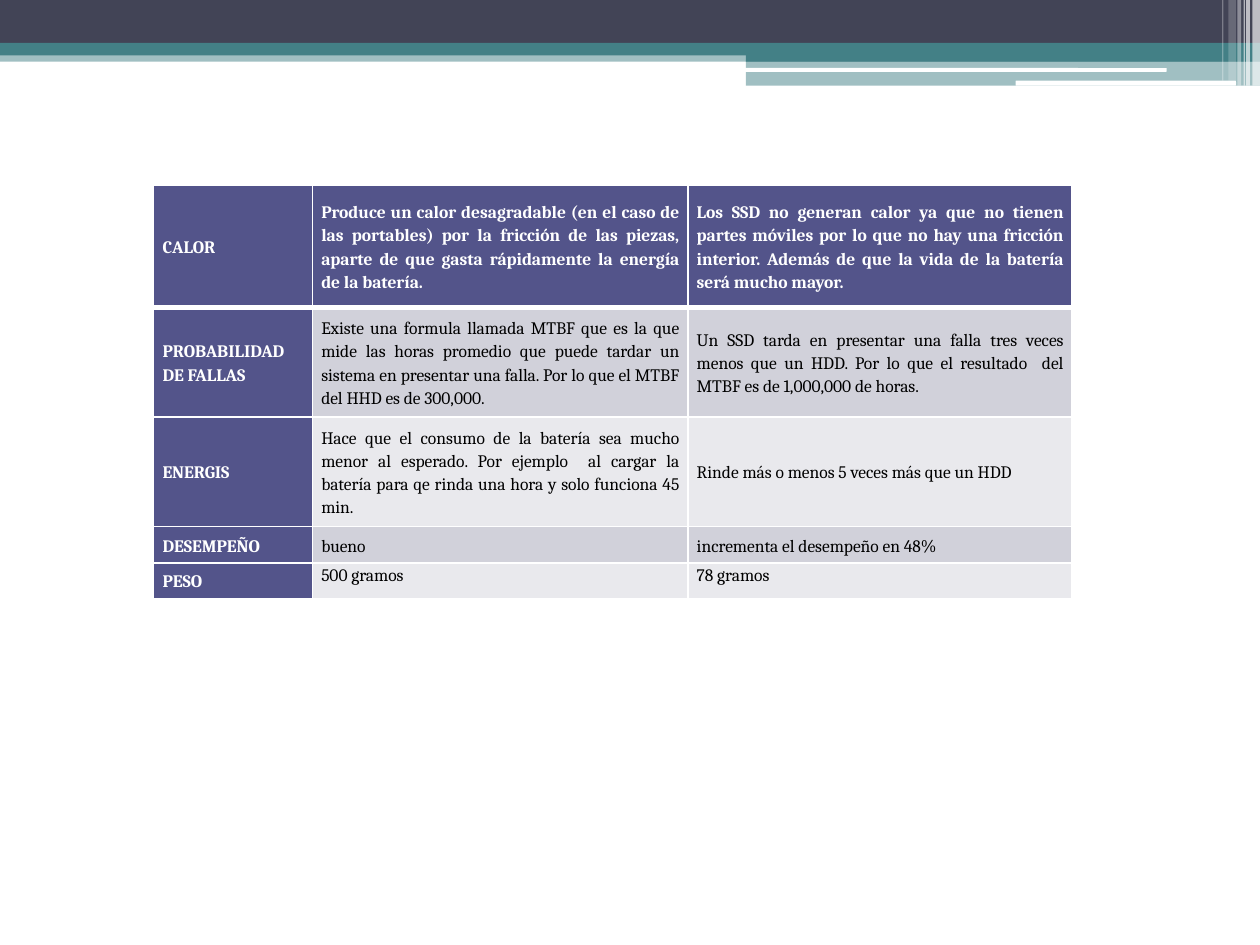
from dataclasses import dataclass

from lxml.etree import SubElement
from pptx import Presentation
from pptx.dml.color import RGBColor
from pptx.enum.shapes import MSO_SHAPE
from pptx.enum.text import MSO_ANCHOR, PP_ALIGN
from pptx.oxml import parse_xml
from pptx.oxml.ns import nsdecls, qn
from pptx.util import Inches, Pt


@dataclass(frozen=True)
class Theme:
    dark: str = "424456"
    teal: str = "438086"
    white: str = "FFFFFF"
    black: str = "000000"
    head: str = "53548A"
    bands: tuple = ("E9E9ED", "D1D1DA")
    font: str = "Cambria"
    size: int = 10
    thin: int = 1
    thick: int = 3


THEME = Theme()

# left, top, width, height, colour, opacity in percent
BARS = [
    (0, 0.4, 10, 0.09, THEME.teal, 50),
    (0, 0, 10, 0.34, THEME.dark, 100),
    (0, 0.34, 10, 0.1, THEME.teal, 100),
    (5.92, 0.39, 4.08, 0.1, THEME.teal, 100),
    (5.92, 0.48, 4.08, 0.2, THEME.teal, 50),
]
# left, top, width, height
LINES = [(5.91, 0.54, 3.35, 0.03), (8.06, 0.64, 1.75, 0.04)]
# left, width, height, opacity in percent
STRIPES = [
    (9.94, 0.06, 0.68, 65),
    (9.89, 0.03, 0.68, 65),
    (9.87, 0.01, 0.68, 60),
    (9.82, 0.03, 0.68, 40),
    (9.75, 0.06, 0.64, 20),
    (9.7, 0.01, 0.64, 30),
]

COLS = [1.26, 2.98, 3.05]
ROWS = [0.97, 0.87, 0.87, 0.29, 0.28]
CELLS = [
    ("CALOR",
     "Produce un calor desagradable (en el caso de las portables) por la "
     "fricción de las piezas, aparte de que gasta rápidamente la energía de "
     "la batería.",
     "Los SSD no generan calor ya que no tienen partes móviles por lo que no "
     "hay una fricción interior. Además de que la vida de la batería será "
     "mucho mayor."),
    ("PROBABILIDAD DE FALLAS",
     "Existe una formula llamada MTBF que es la que mide las horas promedio "
     "que puede tardar un sistema en presentar una falla. Por lo que el MTBF "
     "del HHD es de 300,000.",
     "Un SSD tarda en presentar una falla tres veces menos que un HDD. Por lo "
     "que el resultado  del MTBF es de 1,000,000 de horas."),
    ("ENERGIS",
     "Hace que el consumo de la batería sea mucho menor al esperado. Por "
     "ejemplo  al cargar la batería para qe rinda una hora y solo funciona "
     "45 min.",
     "Rinde más o menos 5 veces más que un HDD"),
    ("DESEMPEÑO", "bueno", "incrementa el desempeño en 48%"),
    ("PESO", "500 gramos", "78 gramos"),
]


def add_bar(slide, box, color, alpha=100, kind=MSO_SHAPE.RECTANGLE):
    bar = slide.shapes.add_shape(kind, *map(Inches, box))
    bar.shadow.inherit = False
    bar.line.fill.background()
    bar.fill.solid()
    bar.fill.fore_color.rgb = RGBColor.from_string(color)
    if alpha < 100:
        tint = bar.fill._xPr.find(qn("a:solidFill"))[0]
        SubElement(tint, qn("a:alpha"), val=str(alpha * 1000))


def add_banner(slide, left, top):
    for x, y, wide, high, color, alpha in BARS:
        add_bar(slide, (left + x, top + y, wide, high), color, alpha)
    for x, y, wide, high in LINES:
        add_bar(slide, (left + x, top + y, wide, high), THEME.white,
                kind=MSO_SHAPE.ROUNDED_RECTANGLE)
    for x, wide, high, alpha in STRIPES:
        add_bar(slide, (left + x, top, wide, high), THEME.white, alpha)


def set_edges(cell, **widths):
    """Draw white borders; keys are the sides L, R, T and B, in points."""
    props = cell._tc.get_or_add_tcPr()
    for spot, side in enumerate("LRTB"):
        props.insert(spot, parse_xml(
            f'<a:ln{side} {nsdecls("a")} w="{Pt(widths[side])}"><a:solidFill>'
            f'<a:srgbClr val="{THEME.white}"/></a:solidFill></a:ln{side}>'))


def fill_cell(cell, text, row, col):
    strong = row == 0 or col == 0
    cell.fill.solid()
    cell.fill.fore_color.rgb = RGBColor.from_string(
        THEME.head if strong else THEME.bands[row % 2])
    cell.margin_left = cell.margin_right = Inches(0.07)
    cell.margin_top = cell.margin_bottom = 0
    last = row == len(ROWS) - 1
    cell.vertical_anchor = (
        MSO_ANCHOR.TOP if last and col else MSO_ANCHOR.MIDDLE)
    cell.text = text
    para = cell.text_frame.paragraphs[0]
    para.line_spacing = 1.15
    para.alignment = PP_ALIGN.JUSTIFY if col else PP_ALIGN.LEFT
    font = para.font
    font.name, font.size, font.bold = THEME.font, Pt(THEME.size), strong
    font.color.rgb = RGBColor.from_string(
        THEME.white if strong else THEME.black)
    set_edges(cell, L=THEME.thin, R=THEME.thin,
              T=THEME.thick if row == 1 else THEME.thin,
              B=THEME.thick if row == 0 else THEME.thin)


def add_grid(slide, left, top):
    box = map(Inches, (left, top, sum(COLS), sum(ROWS)))
    table = slide.shapes.add_table(len(ROWS), len(COLS), *box).table
    for col, wide in zip(table.columns, COLS):
        col.width = Inches(wide)
    for row, high in zip(table.rows, ROWS):
        row.height = Inches(high)
    for i, texts in enumerate(CELLS):
        for j, text in enumerate(texts):
            fill_cell(table.cell(i, j), text, i, j)


def main():
    deck = Presentation()
    deck.slide_width, deck.slide_height = Inches(10), Inches(7.5)
    slide = deck.slides.add_slide(deck.slide_layouts[6])
    add_banner(slide, 0, 0)
    add_grid(slide, 1.22, 1.47)
    deck.save("out.pptx")


if __name__ == "__main__":
    main()
